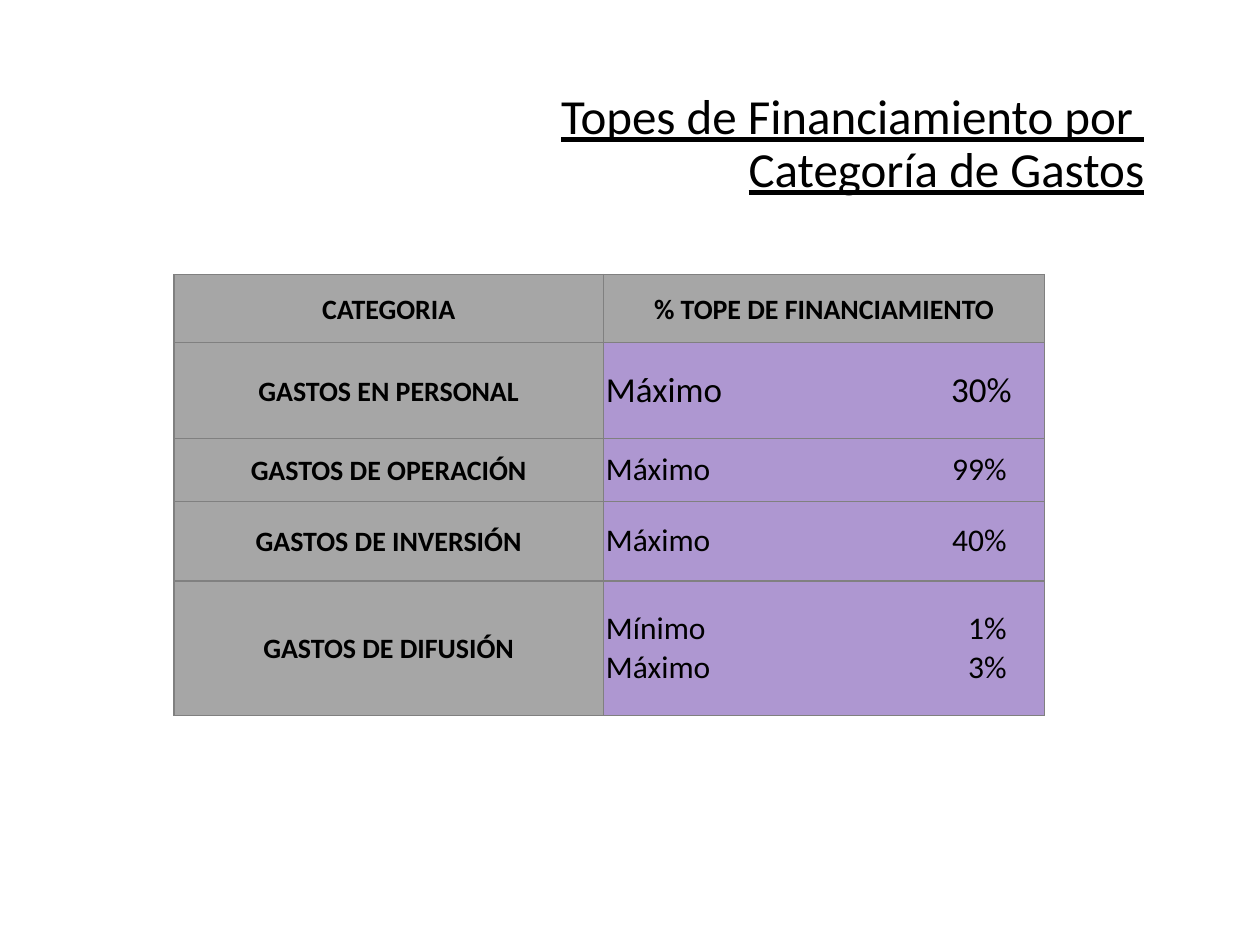
import pptx
import pptx.util
import pptx.dml.color
import pptx.enum.text
import pptx.oxml
import pptx.oxml.ns
from pptx.util import Inches

RGBColor = pptx.dml.color.RGBColor
ALIGN = pptx.enum.text.PP_ALIGN
MIDDLE = pptx.enum.text.MSO_ANCHOR.MIDDLE
BLACK = RGBColor(0x00, 0x00, 0x00)
GREY = RGBColor(0xA6, 0xA6, 0xA6)
PURPLE = RGBColor(0xAE, 0x97, 0xD1)
BORDER = RGBColor(0x80, 0x80, 0x80)
FONT = "Calibri"

HEADERS = ["CATEGORIA", "% TOPE DE FINANCIAMIENTO"]
# Category, row height, value size, tab position, (limit, percentage) pairs
ROWS = [
    ("GASTOS EN PERSONAL", 0.76, 20, 3.22, [("Máximo", "30%")]),
    ("GASTOS DE OPERACIÓN", 0.5, 18, 3.18, [("Máximo", "99%")]),
    ("GASTOS DE INVERSIÓN", 0.63, 18, 3.18, [("Máximo", "40%")]),
    ("GASTOS DE DIFUSIÓN", 1.07, 18, 3.18, [("Mínimo", "1%"), ("Máximo", "3%")]),
]


def add_run(p, text, size, bold=False, underline=False):
    r = p.add_run()
    r.text = text
    r.font.name = FONT
    r.font.size = pptx.util.Pt(size)
    r.font.bold = bold
    r.font.underline = underline
    r.font.color.rgb = BLACK


def add_title(s, left, top, width, height):
    sp = s.shapes.title
    sp.left, sp.top, sp.width, sp.height = left, top, width, height
    tf = sp.text_frame
    tf.auto_size = pptx.enum.text.MSO_AUTO_SIZE.NONE
    tf.vertical_anchor = MIDDLE
    p = tf.paragraphs[0]
    p.alignment = ALIGN.RIGHT
    p.line_spacing = 0.9
    add_run(p, "Topes de Financiamiento por ", 28, underline=True)
    p.add_line_break()
    add_run(p, "Categoría de Gastos", 28, underline=True)


def format_cell(cell, color):
    cell.margin_left = cell.margin_right = Inches(0.02)
    cell.margin_top = cell.margin_bottom = 0
    cell.vertical_anchor = MIDDLE
    # Borders go before the fill in the cell properties
    tcPr = cell._tc.get_or_add_tcPr()
    for side in ("lnL", "lnR", "lnT", "lnB"):
        tcPr.append(pptx.oxml.parse_xml(
            f'<a:{side} {pptx.oxml.ns.nsdecls("a")} w="{pptx.util.Pt(1)}">'
            f'<a:solidFill><a:srgbClr val="{BORDER}"/></a:solidFill></a:{side}>'))
    cell.fill.solid()
    cell.fill.fore_color.rgb = color


def fill_label(cell, text):
    format_cell(cell, GREY)
    p = cell.text_frame.paragraphs[0]
    p.alignment = ALIGN.CENTER
    p.line_spacing = 1.07
    add_run(p, text, 16, bold=True)


def fill_limits(cell, limits, size, tab):
    format_cell(cell, PURPLE)
    tf = cell.text_frame
    for i, (limit, percentage) in enumerate(limits):
        p = tf.add_paragraph() if i else tf.paragraphs[0]
        p.alignment = ALIGN.LEFT
        # Percentages line up on a right tab stop
        p._p.get_or_add_pPr().append(pptx.oxml.parse_xml(
            f'<a:tabLst {pptx.oxml.ns.nsdecls("a")}>'
            f'<a:tab pos="{Inches(tab)}" algn="r"/></a:tabLst>'))
        add_run(p, f"{limit}\t{percentage}", size)


def add_limits_table(s, left, top, width, height):
    table = s.shapes.add_table(len(ROWS) + 1, 2, left, top, width, height).table
    table.horz_banding = False
    table.columns[0].width = Inches(3.41)
    table.columns[1].width = width - Inches(3.41)

    # Header row
    table.rows[0].height = Inches(0.54)
    for col, text in enumerate(HEADERS):
        fill_label(table.cell(0, col), text)

    # One row per category
    for row, (category, row_height, size, tab, limits) in enumerate(ROWS, 1):
        table.rows[row].height = Inches(row_height)
        fill_label(table.cell(row, 0), category)
        fill_limits(table.cell(row, 1), limits, size, tab)


def main():
    prs = pptx.Presentation()
    prs.slide_width, prs.slide_height = Inches(10), Inches(7.5)
    s = prs.slides.add_slide(prs.slide_layouts[5])
    add_title(s, Inches(0.83), Inches(0.73), Inches(8.35), Inches(0.84))
    add_limits_table(s, Inches(1.38), Inches(2.18), Inches(6.91), Inches(3.5))
    prs.save("out.pptx")


if __name__ == "__main__":
    main()
